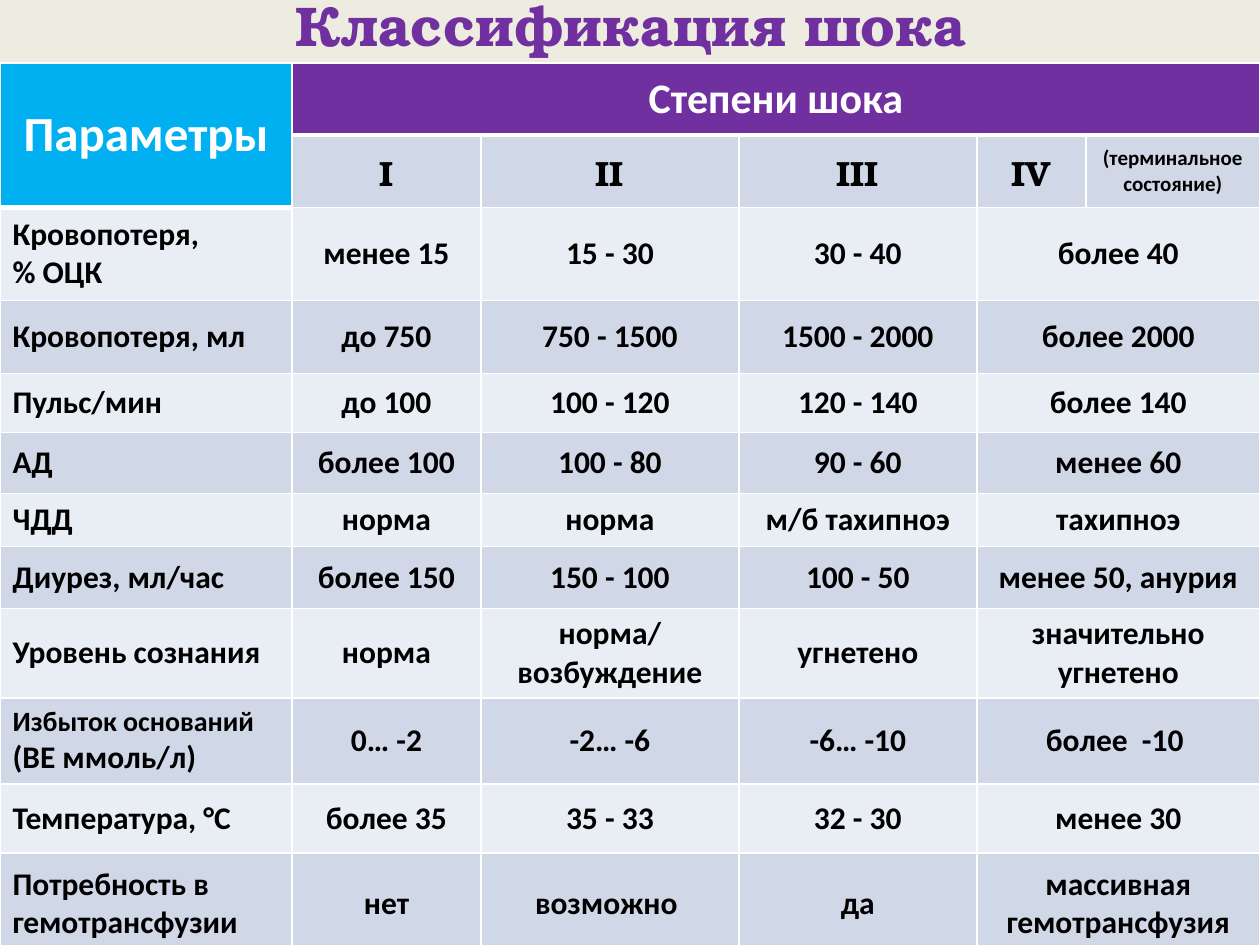
from lxml.etree import SubElement
from pptx import Presentation
from pptx.dml.color import RGBColor
from pptx.enum.text import MSO_ANCHOR as Anchor, MSO_AUTO_SIZE as Fit, PP_ALIGN as Align
from pptx.oxml.ns import qn
from pptx.util import Pt

PX = 914400 // 126
SANS, SERIF = "Calibri", "TeX Gyre Bonum"
CREAM = RGBColor(0xEE, 0xEC, 0xE1)
PURPLE = RGBColor(0x70, 0x30, 0xA0)
CYAN = RGBColor(0x00, 0xB0, 0xF0)
DARK = RGBColor(0xD0, 0xD8, 0xE8)
LIGHT = RGBColor(0xE9, 0xED, 0xF4)
WHITE = RGBColor(0xFF, 0xFF, 0xFF)
BLACK = RGBColor(0, 0, 0)

COLS = [292, 189, 258, 238, 109, 174]
ROWS = [72, 72, 93, 73, 59, 61, 53, 62, 89, 86, 69, 102]
GRADES = ["I", "II", "III", "IV", "(терминальное состояние)"]
DATA = [
    ["Кровопотеря, \v% ОЦК", "менее 15", "15 - 30", "30 - 40", "более 40"],
    ["Кровопотеря, мл", "до 750", "750 - 1500", "1500 - 2000", "более 2000"],
    ["Пульс/мин", "до 100", "100 - 120", "120 - 140", "более 140"],
    ["АД", "более 100", "100 - 80", "90 - 60", "менее 60"],
    ["ЧДД", "норма", "норма", "м/б тахипноэ", "тахипноэ"],
    ["Диурез, мл/час", "более 150", "150 - 100", "100 - 50", "менее 50, анурия"],
    ["Уровень сознания", "норма", "норма/\vвозбуждение", "угнетено",
     "значительно\vугнетено"],
    ["Избыток оснований \v(BE ммоль/л)", "0… -2", "-2… -6", "-6… -10", "более  -10 "],
    ["Температура, °С", "более 35", "35 - 33", "32 - 30", "менее 30"],
    ["Потребность в \vгемотрансфузии", "нет", "возможно ", "да",
     "массивная\vгемотрансфузия"],
]
BASE = 7  # data row whose label starts with a smaller line


def write(frame, text, size, color, font=SANS, align=Align.CENTER):
    para = frame.paragraphs[0]
    para.text = text
    para.alignment = align
    for run in para.runs:
        face = run.font
        face.name, face.size, face.bold = font, Pt(size), True
        face.color.rgb = color


def edge(cell, row, col):
    """White grid lines, thick under the header cells."""
    thick = {"T": row == 1 or (row == 2 and col == 0),
             "B": row == 0 or (row == 1 and col == 0)}
    props = cell._tc.get_or_add_tcPr()
    for i, side in enumerate("LRTB"):
        width = Pt(3 if thick.get(side) else 1)
        line = SubElement(props, qn(f"a:ln{side}"), w=str(width))
        fill = SubElement(line, qn("a:solidFill"))
        SubElement(fill, qn("a:srgbClr"), val=str(WHITE))
        props.insert(i, line)


def put(cell, text, size, color=BLACK, **style):
    cell.vertical_anchor = Anchor.MIDDLE
    write(cell.text_frame, text, size, color, **style)


def add_title(slide, x, y, w, h):
    title = slide.shapes.title
    title.left, title.top, title.width, title.height = (v * PX for v in (x, y, w, h))
    frame = title.text_frame
    frame.auto_size = Fit.NONE
    frame.vertical_anchor = Anchor.MIDDLE
    write(frame, "Классификация шока", 32, PURPLE, font=SERIF)


def add_grid(slide, x, y):
    box = (v * PX for v in (x, y, sum(COLS), sum(ROWS)))
    table = slide.shapes.add_table(len(ROWS), len(COLS), *box).table
    for col, width in zip(table.columns, COLS):
        col.width = width * PX
    for row, height in zip(table.rows, ROWS):
        row.height = height * PX

    # Fills and borders
    for r in range(len(ROWS)):
        for c in range(len(COLS)):
            cell = table.cell(r, c)
            cell.fill.solid()
            band = DARK if r % 2 else LIGHT
            head = CYAN if c == 0 else PURPLE
            cell.fill.fore_color.rgb = head if r == 0 or (r == 1 and c == 0) else band
            edge(cell, r, c)

    # Header
    table.cell(0, 0).merge(table.cell(1, 0))
    table.cell(0, 1).merge(table.cell(0, 5))
    put(table.cell(0, 0), "Параметры", 28, WHITE)
    put(table.cell(0, 1), "Степени шока", 24, WHITE)
    for c, grade in enumerate(GRADES, 1):
        note = c == len(GRADES)
        put(table.cell(1, c), grade, 12 if note else 20, font=SANS if note else SERIF)

    # Body, with the last two columns joined
    for r, texts in enumerate(DATA, 2):
        table.cell(r, 4).merge(table.cell(r, 5))
        for c, text in enumerate(texts):
            put(table.cell(r, c), text, 18, align=Align.CENTER if c else Align.LEFT)
    label = table.cell(BASE + 2, 0).text_frame.paragraphs[0]
    label.runs[0].font.size = Pt(16)


def main():
    deck = Presentation()
    deck.slide_width, deck.slide_height = 1260 * PX, 945 * PX
    slide = deck.slides.add_slide(deck.slide_layouts[5])
    slide.background.fill.solid()
    slide.background.fill.fore_color.rgb = CREAM
    add_title(slide, 1, 0, 1260, 49)
    add_grid(slide, 0, 63)
    deck.save("out.pptx")


if __name__ == "__main__":
    main()
